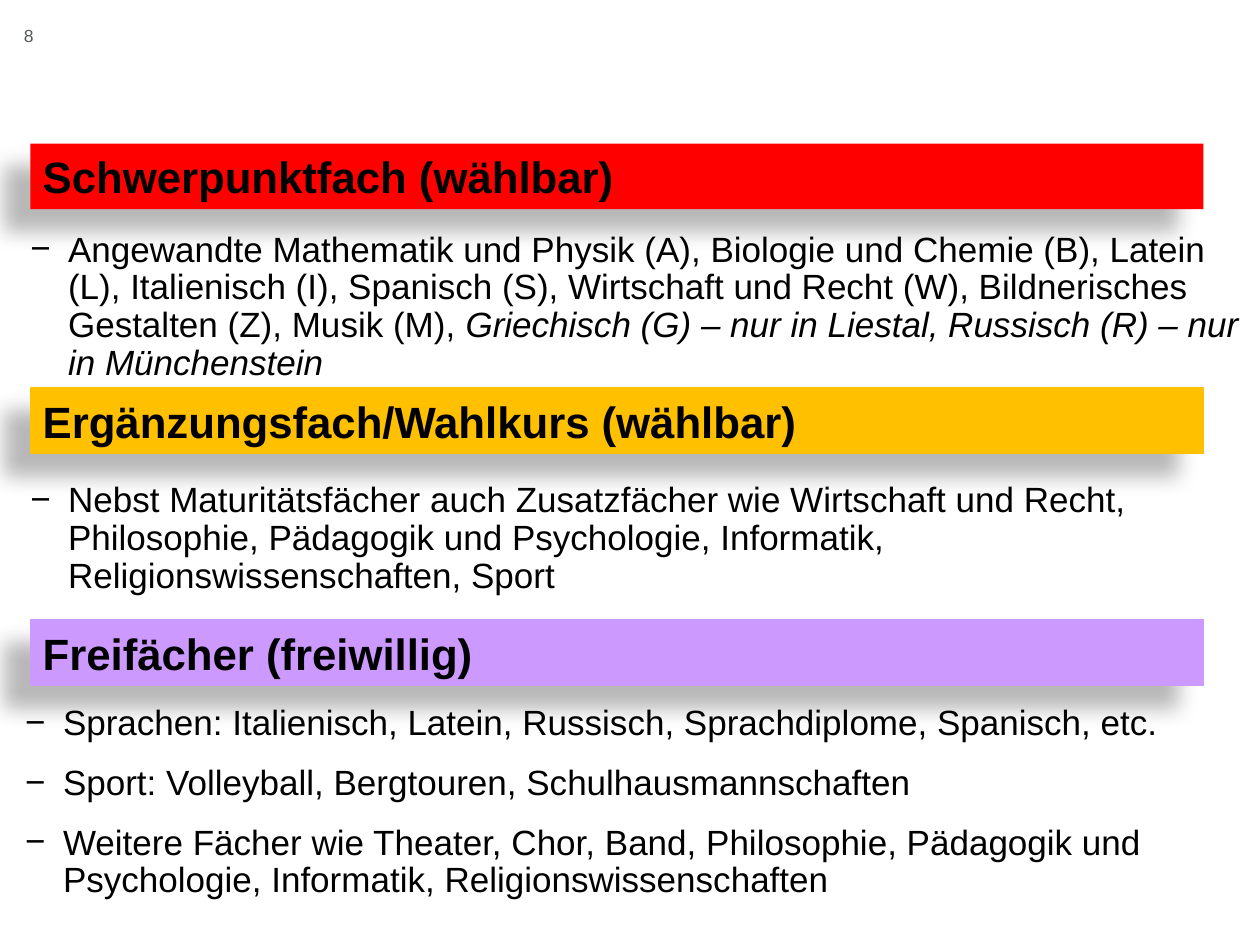
from lxml import etree
from pptx import Presentation
from pptx.dml.color import RGBColor
from pptx.enum.shapes import MSO_SHAPE
from pptx.enum.text import MSO_ANCHOR, MSO_AUTO_SIZE, PP_ALIGN
from pptx.oxml import parse_xml
from pptx.oxml.ns import nsdecls, qn
from pptx.util import Inches, Pt

RECT = MSO_SHAPE.RECTANGLE
TOP, MIDDLE = MSO_ANCHOR.TOP, MSO_ANCHOR.MIDDLE
NO_FIT, GROW = MSO_AUTO_SIZE.NONE, MSO_AUTO_SIZE.SHAPE_TO_FIT_TEXT
LEFT = PP_ALIGN.LEFT

SHADOW = (
    f'<a:effectLst {nsdecls("a")}>'
    '<a:outerShdw blurRad="149860" dist="250190" dir="8460000" algn="ctr" rotWithShape="0">'
    '<a:srgbClr val="000000"><a:alpha val="28000"/></a:srgbClr>'
    '</a:outerShdw></a:effectLst>'
)

# Paragraphs are lists of (text, italic) runs
SCHWERPUNKT = [[
    ("Angewandte Mathematik und Physik (A), Biologie und Chemie (B), Latein (L), "
     "Italienisch (I), Spanisch (S), Wirtschaft und Recht (W), Bildnerisches "
     "Gestalten (Z), Musik (M), ", False),
    ("Griechisch (G) – nur in Liestal, Russisch (R) – nur in Münchenstein", True),
]]
ERGAENZUNG = [[
    ("Nebst Maturitätsfächer auch Zusatzfächer wie Wirtschaft und Recht, "
     "Philosophie, Pädagogik und Psychologie, Informatik, "
     "Religionswissenschaften, Sport", False),
]]
FREIFAECHER = [
    [("Sprachen: Italienisch, Latein, Russisch, Sprachdiplome, Spanisch, etc.", False)],
    [("Sport: Volleyball, Bergtouren, Schulhausmannschaften", False)],
    [("Weitere Fächer wie Theater, Chor, Band, Philosophie, Pädagogik und "
      "Psychologie, Informatik, Religionswissenschaften", False)],
]


def rgb(value):
    return RGBColor.from_string(value)


def set_attrs(target, **values):
    for name, value in values.items():
        setattr(target, name, value)


def add_run(p, text, size, color="000000", **font):
    r = p.add_run()
    r.text = text
    set_attrs(r.font, name="Arial", size=Pt(size), **font)
    r.font.color.rgb = rgb(color)


def prepare_frame(sp):
    """Plain frame without margins."""
    tf = sp.text_frame
    set_attrs(tf, word_wrap=True, auto_size=NO_FIT, vertical_anchor=TOP,
              margin_left=0, margin_right=0, margin_top=0, margin_bottom=0)
    return tf


def add_page_number(s, box, number):
    tf = prepare_frame(s.shapes.add_textbox(*map(Inches, box)))
    add_run(tf.paragraphs[0], number, 10, "555959")


def add_heading_bar(s, box, text, color, outlined):
    sp = s.shapes.add_shape(RECT, *map(Inches, box))
    sp.fill.solid()
    sp.fill.fore_color.rgb = rgb(color)
    if outlined:
        sp.line.color.rgb = rgb(color)
        sp.line.width = Pt(0.75)
    else:
        sp.line.fill.background()
    sp._element.spPr.append(parse_xml(SHADOW))
    tf = sp.text_frame
    set_attrs(tf, word_wrap=True, auto_size=GROW, vertical_anchor=MIDDLE)
    p = tf.paragraphs[0]
    p.alignment = LEFT
    add_run(p, text, 25, bold=True)


def fill_dash_list(sp, box, paragraphs):
    set_attrs(sp, **dict(zip(("left", "top", "width", "height"), map(Inches, box))))
    tf = prepare_frame(sp)
    for i, runs in enumerate(paragraphs):
        p = tf.add_paragraph() if i else tf.paragraphs[0]
        set_attrs(p, alignment=LEFT, line_spacing=0.9,
                  space_before=Pt(0), space_after=Pt(12.5))
        pPr = p._p.get_or_add_pPr()
        pPr.set("marL", str(Inches(0.3)))
        pPr.set("indent", str(-Inches(0.3)))
        etree.SubElement(pPr, qn("a:buFont"), typeface="Arial")
        etree.SubElement(pPr, qn("a:buChar"), char="−")
        for text, italic in runs:
            add_run(p, text, 20, italic=italic)


def main():
    prs = Presentation()
    prs.slide_width, prs.slide_height = Inches(10), Inches(7.5)
    s = prs.slides.add_slide(prs.slide_layouts[1])
    title, body = s.placeholders
    title._element.getparent().remove(title._element)

    add_page_number(s, (0.19, 0.2, 0.44, 0.4), "8")

    # Heading, colour, outline, bar top, list box, list
    sections = [
        ("Schwerpunktfach (wählbar)", "FF0000", False, 1.14,
         (0.24, 1.84, 9.61, 5.16), SCHWERPUNKT),
        ("Ergänzungsfach/Wahlkurs (wählbar)", "FFC000", True, 3.08,
         (0.24, 3.83, 9.61, 1.6), ERGAENZUNG),
        ("Freifächer (freiwillig)", "CC99FF", True, 4.92,
         (0.2, 5.6, 9.61, 2.33), FREIFAECHER),
    ]
    for i, (heading, color, outlined, top, box, paragraphs) in enumerate(sections):
        add_heading_bar(s, (0.24, top, 9.31, 0.52), heading, color, outlined)
        if i == 0:
            # The body placeholder lies above the shadow of its heading
            sp = body
            s.shapes._spTree.append(sp._element)
        else:
            sp = s.shapes.add_textbox(*map(Inches, box))
        fill_dash_list(sp, box, paragraphs)

    prs.save("out.pptx")


if __name__ == "__main__":
    main()
